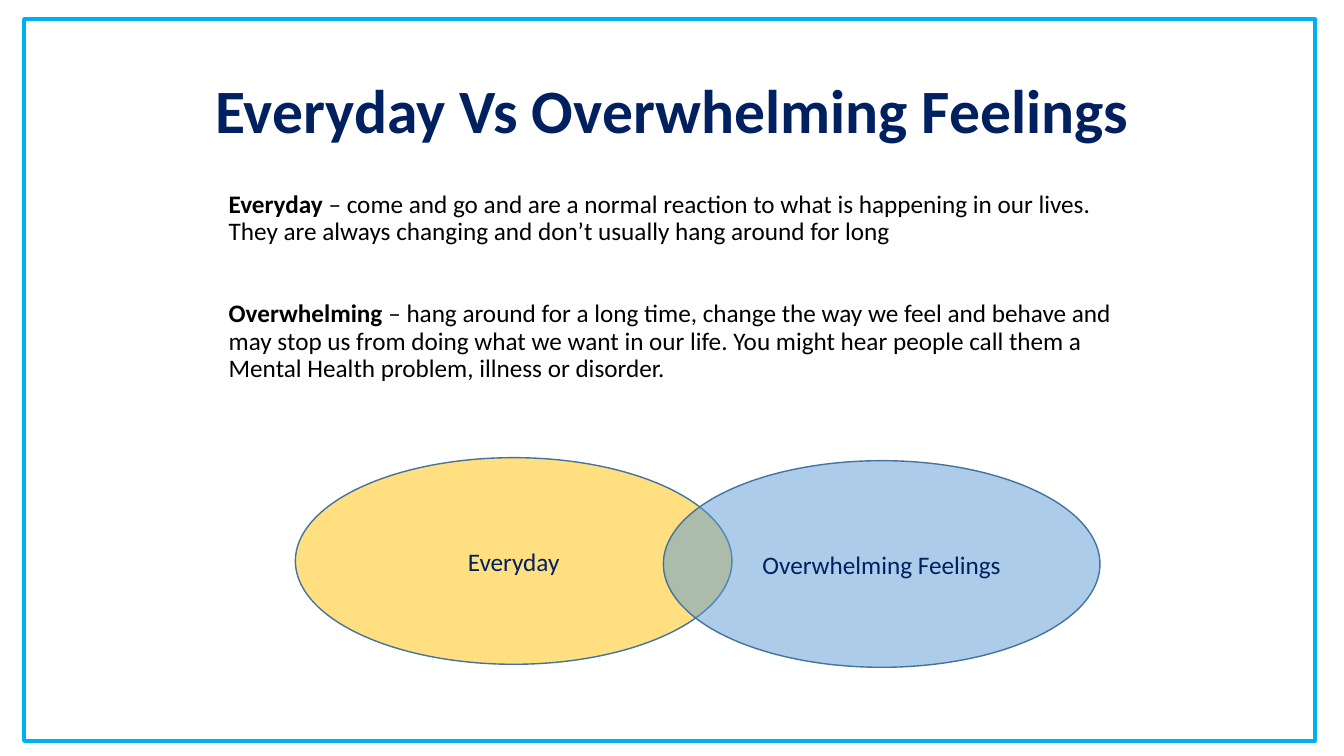
import pptx
import pptx.util
import pptx.dml.color
import pptx.enum.shapes
import pptx.enum.text
import pptx.oxml.ns
import lxml.etree

Inches, Pt = pptx.util.Inches, pptx.util.Pt
SHAPE = pptx.enum.shapes.MSO_SHAPE
ALIGN = pptx.enum.text.PP_ALIGN
ANCHOR = pptx.enum.text.MSO_ANCHOR

COLORS = {
    "white": "FFFFFF",
    "black": "000000",
    "navy": "002060",
    "frame": "00B0F0",
    "everyday": "FFC000",
    "overwhelming": "5B9BD5",
    "outline": "43739E",
}


def rgb(name):
    return pptx.dml.color.RGBColor.from_string(COLORS[name])


def write(p, text, size=18, color="navy", bold=False, font="Calibri"):
    r = p.add_run()
    r.text = text
    r.font.name, r.font.size, r.font.bold = font, Pt(size), bold
    r.font.color.rgb = rgb(color)


class FeelingsSlide:
    """Holds the current slide and draws its elements in one style."""

    def __init__(self, prs):
        self.s = prs.slides.add_slide(prs.slide_layouts[5])

    def shape(self, kind, box, fill, line, width, alpha=None):
        sp = self.s.shapes.add_shape(kind, *map(Inches, box))
        sp.shadow.inherit = False
        sp.fill.solid()
        sp.fill.fore_color.rgb = rgb(fill)
        sp.line.color.rgb = rgb(line)
        sp.line.width = Pt(width)
        if alpha is not None:
            clr = sp.fill._xPr.find(".//" + pptx.oxml.ns.qn("a:srgbClr"))
            lxml.etree.SubElement(clr, pptx.oxml.ns.qn("a:alpha"), val=str(alpha * 1000))
        return sp

    def frame(self, box):
        sp = self.shape(SHAPE.RECTANGLE, box, "white", "frame", 3)
        self.s.shapes.title._element.addprevious(sp._element)

    def title(self, box, text):
        sp = self.s.shapes.title
        sp.left, sp.top, sp.width, sp.height = map(Inches, box)
        tf = sp.text_frame
        tf.word_wrap = True
        tf.vertical_anchor = ANCHOR.MIDDLE
        p = tf.paragraphs[0]
        p.alignment, p.line_spacing = ALIGN.CENTER, 0.9
        write(p, text, size=44, bold=True)

    def definitions(self, box, entries):
        tf = self.s.shapes.add_textbox(*map(Inches, box)).text_frame
        tf.word_wrap = True
        for i, (term, meaning) in enumerate(entries):
            p = tf.add_paragraph() if i else tf.paragraphs[0]
            p.line_spacing = 0.9
            p.space_before = Pt(39.5 if i else 0)
            write(p, term, color="black", bold=True)
            write(p, meaning, color="black")

    def ellipse(self, left, top, text, fill):
        sp = self.shape(SHAPE.OVAL, (left, top, 4.33, 2.05), fill, "outline", 1, alpha=50)
        tf = sp.text_frame
        tf.word_wrap = True
        tf.vertical_anchor = ANCHOR.MIDDLE
        p = tf.paragraphs[0]
        p.alignment = ALIGN.CENTER
        write(p, text)


def main():
    prs = pptx.Presentation()
    prs.slide_width, prs.slide_height = Inches(13.33), Inches(7.5)
    slide = FeelingsSlide(prs)
    slide.frame((0.24, 0.19, 12.8, 7.16))
    slide.title((0.92, 0.4, 11.5, 1.45), "Everyday Vs Overwhelming Feelings")
    slide.definitions((2.17, 1.85, 9, 2.24), [
        ("Everyday", " – come and go and are a normal reaction to what is happening in "
                     "our lives. They are always changing and don’t usually hang around for long"),
        ("Overwhelming", " – hang around for a long time, change the way we feel and behave "
                         "and may stop us from doing what we want in our life. You might hear "
                         "people call them a Mental Health problem, illness or disorder."),
    ])
    slide.ellipse(2.93, 4.54, "Everyday", "everyday")
    slide.ellipse(6.58, 4.57, "Overwhelming Feelings", "overwhelming")
    prs.save("out.pptx")


if __name__ == "__main__":
    main()
